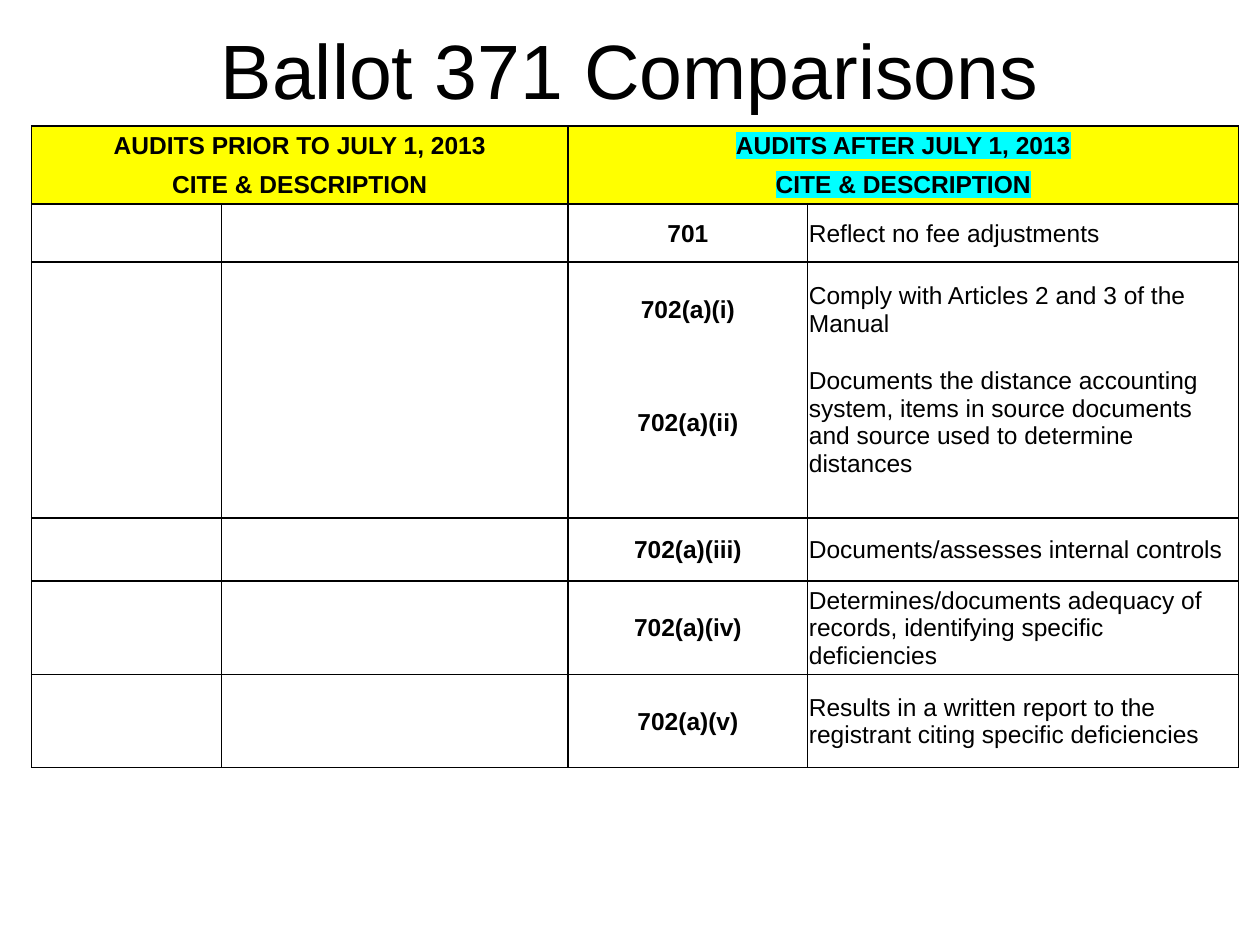
from lxml.etree import SubElement
from pptx import Presentation
from pptx.dml.color import RGBColor
from pptx.enum.text import MSO_ANCHOR, PP_ALIGN
from pptx.oxml.ns import qn
from pptx.util import Inches, Pt

COLORS = {"ink": "000000", "header": "FFFF00", "highlight": "00FFFF"}
FONT = "Arial"
TEXT_SIZE = 14
COLUMN_WIDTHS = [1.51, 2.75, 1.9, 3.42]
ROW_HEIGHTS = [0.3, 0.32, 0.46, 0.75, 1.04, 0.23, 0.5, 0.74, 0.74]
HEADERS = [
    ("AUDITS PRIOR TO JULY 1, 2013", "AUDITS AFTER JULY 1, 2013"),
    ("CITE & DESCRIPTION", "CITE & DESCRIPTION"),
]
CITES = [
    ("701", "Reflect no fee adjustments"),
    ("702(a)(i)", "Comply with Articles 2 and 3 of the Manual"),
    ("702(a)(ii)", "Documents the distance accounting system, items in source "
     "documents and source used to determine distances"),
    ("", ""),
    ("702(a)(iii)", "Documents/assesses internal controls"),
    ("702(a)(iv)", "Determines/documents adequacy of records, identifying "
     "specific deficiencies"),
    ("702(a)(v)", "Results in a written report to the registrant citing "
     "specific deficiencies"),
]
OPEN_BELOW = {0, 3, 4}


def format_run(run, size, bold=False):
    """Apply the slide font, size, weight and ink colour to a run."""
    run.font.name = FONT
    run.font.size = Pt(size)
    run.font.bold = bold
    run.font.color.rgb = RGBColor.from_string(COLORS["ink"])


def highlight_run(run, color):
    """Put a marker colour behind a run."""
    properties = run.font._element
    marker = SubElement(properties, qn("a:highlight"))
    SubElement(marker, qn("a:srgbClr"), val=color)
    properties.find(qn("a:solidFill")).addnext(marker)


def set_borders(cell, top, bottom):
    """Rule both sides of a cell, and its top and bottom when asked."""
    properties = cell._tc.get_or_add_tcPr()
    for tag, visible in (("lnL", True), ("lnR", True), ("lnT", top), ("lnB", bottom)):
        line = SubElement(properties, qn(f"a:{tag}"), w=str(Pt(1)))
        if visible:
            fill = SubElement(line, qn("a:solidFill"))
            SubElement(fill, qn("a:srgbClr"), val=COLORS["ink"])
        else:
            SubElement(line, qn("a:noFill"))


def fill_cell(cell, text, bold, centered):
    """Write a cell's text with tight margins."""
    cell.vertical_anchor = MSO_ANCHOR.MIDDLE
    cell.margin_left = cell.margin_right = cell.margin_top = Inches(0.01)
    cell.margin_bottom = 0
    paragraph = cell.text_frame.paragraphs[0]
    paragraph.text = text
    paragraph.alignment = PP_ALIGN.CENTER if centered else PP_ALIGN.LEFT
    for run in paragraph.runs:
        format_run(run, TEXT_SIZE, bold)
    if not text:
        SubElement(paragraph._p, qn("a:endParaRPr"), sz=str(TEXT_SIZE * 100))


def add_title(slide, left, top, width, height):
    """Add the centred slide title."""
    box = slide.shapes.add_textbox(Inches(left), Inches(top), Inches(width), Inches(height))
    frame = box.text_frame
    frame.word_wrap = True
    frame.vertical_anchor = MSO_ANCHOR.MIDDLE
    frame.text = "Ballot 371 Comparisons"
    frame.paragraphs[0].alignment = PP_ALIGN.CENTER
    format_run(frame.paragraphs[0].runs[0], 44)


def add_comparison_table(slide, left, top, width, height):
    """Add the table that compares audits before and after the date."""
    frame = slide.shapes.add_table(
        len(ROW_HEIGHTS), len(COLUMN_WIDTHS),
        Inches(left), Inches(top), Inches(width), Inches(height))
    table = frame.table
    table.first_row = table.horz_banding = False
    for column, column_width in zip(table.columns, COLUMN_WIDTHS):
        column.width = Inches(column_width)
    for row, row_height in zip(table.rows, ROW_HEIGHTS):
        row.height = Inches(row_height)

    rows = [(prior, "", after, "") for prior, after in HEADERS]
    rows += [("", "", cite, description) for cite, description in CITES]
    for row_index, texts in enumerate(rows):
        is_header = row_index < len(HEADERS)
        for column_index, text in enumerate(texts):
            cell = table.cell(row_index, column_index)
            is_description = column_index == 3
            fill_cell(cell, text, not is_description, not is_description)
            is_blank_block = column_index < 2 and not is_header
            set_borders(cell, is_blank_block or row_index - 1 not in OPEN_BELOW,
                        is_blank_block or row_index not in OPEN_BELOW)
            if is_header:
                cell.fill.solid()
                cell.fill.fore_color.rgb = RGBColor.from_string(COLORS["header"])
                for run in cell.text_frame.paragraphs[0].runs:
                    highlight_run(run, COLORS["highlight" if column_index == 2 else "header"])
            else:
                cell.fill.background()

    for row_index in range(len(HEADERS)):
        for column_index in (0, 2):
            table.cell(row_index, column_index).merge(table.cell(row_index, column_index + 1))
    for column_index in (0, 1):
        table.cell(3, column_index).merge(table.cell(5, column_index))


def main():
    """Build and save the presentation."""
    presentation = Presentation()
    presentation.slide_width = Inches(10)
    presentation.slide_height = Inches(7.5)
    slide = presentation.slides.add_slide(presentation.slide_layouts[6])
    add_title(slide, 0.75, 0.17, 8.5, 0.75)
    add_comparison_table(slide, 0.25, 1, sum(COLUMN_WIDTHS), sum(ROW_HEIGHTS))
    presentation.save("out.pptx")


if __name__ == "__main__":
    main()
